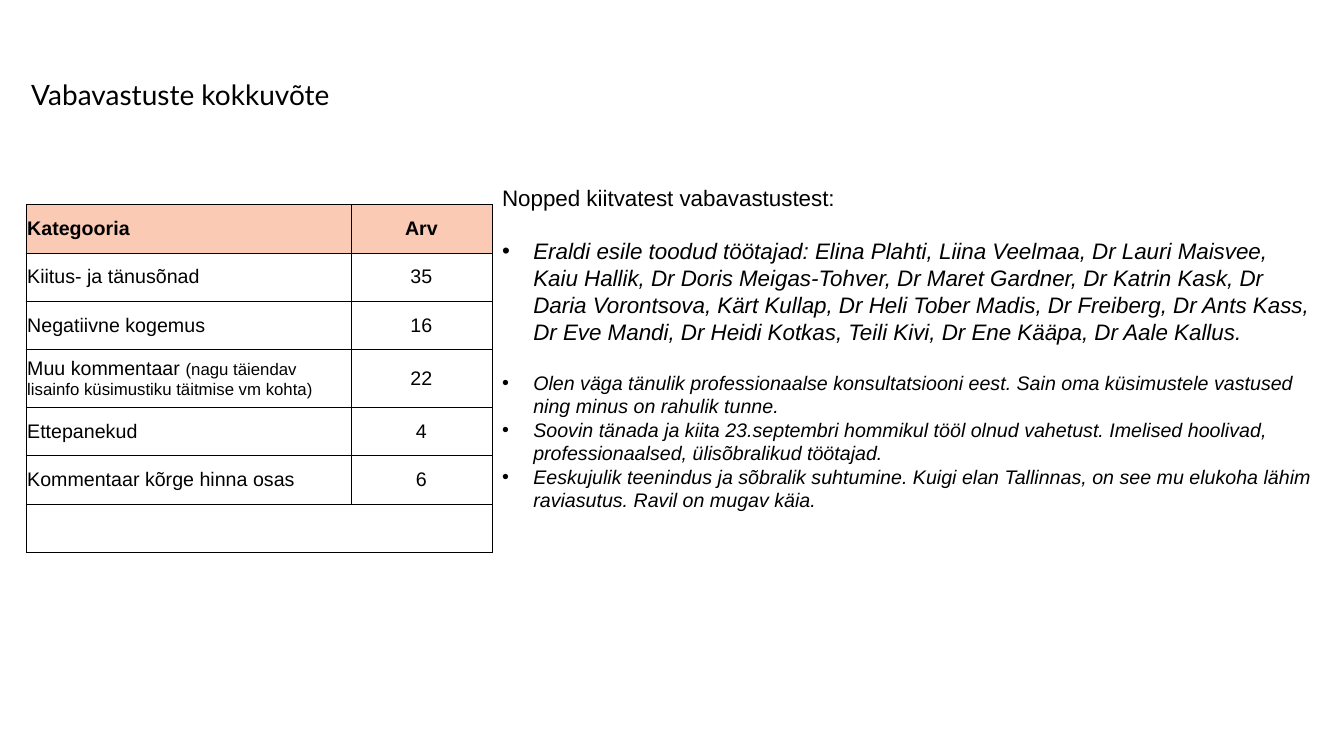
from lxml import etree
from pptx import Presentation
from pptx.dml.color import RGBColor
from pptx.enum.text import MSO_ANCHOR, PP_ALIGN
from pptx.oxml.ns import qn
from pptx.util import Inches, Pt

MIDDLE, TOP = MSO_ANCHOR.MIDDLE, MSO_ANCHOR.TOP
LEFT, CENTER = PP_ALIGN.LEFT, PP_ALIGN.CENTER

BLACK, PEACH = "000000", "FACAB4"
COLUMN_WIDTHS = (3.22, 1.4)
ROW_HEIGHTS = (0.48, 0.48, 0.48, 0.57, 0.48, 0.48, 0.48)
CATEGORIES = [
    ("Kategooria", "Arv"),
    ("Kiitus- ja tänusõnad", "35"),
    ("Negatiivne kogemus", "16"),
    ("Muu kommentaar ", "22"),
    ("Ettepanekud", "4"),
    ("Kommentaar kõrge hinna osas", "6"),
]
OTHER_ROW = 3
OTHER_NOTE = "(nagu täiendav lisainfo küsimustiku täitmise vm kohta)"

# Text, size, space before
QUOTES = [
    ("Eraldi esile toodud töötajad: Elina Plahti, Liina Veelmaa, Dr Lauri Maisvee, "
     "Kaiu Hallik, Dr Doris Meigas-Tohver, Dr Maret Gardner, Dr Katrin Kask, "
     "Dr Daria Vorontsova, Kärt Kullap, Dr Heli Tober Madis, Dr Freiberg, "
     "Dr Ants Kass, Dr Eve Mandi, Dr Heidi Kotkas, Teili Kivi, Dr Ene Kääpa, "
     "Dr Aale Kallus.", 16, 18.5),
    ("Olen väga tänulik professionaalse konsultatsiooni eest. Sain oma küsimustele "
     "vastused ning minus on rahulik tunne.", 14, 18.5),
    ("Soovin tänada ja kiita 23.septembri hommikul tööl olnud vahetust. Imelised "
     "hoolivad, professionaalsed, ülisõbralikud töötajad.", 14, 0),
    ("Eeskujulik teenindus ja sõbralik suhtumine. Kuigi elan Tallinnas, on see mu "
     "elukoha lähim raviasutus. Ravil on mugav käia.", 14, 0),
]


def color(value):
    return RGBColor.from_string(value)


def style_font(font, size, name="Arial", bold=False, italic=False):
    font.name = name
    font.size = Pt(size)
    font.bold = bold
    font.italic = italic
    font.color.rgb = color(BLACK)


def set_margins(target, margin):
    target.margin_left = target.margin_right = Inches(margin)
    target.margin_top = target.margin_bottom = Inches(margin)


def add_text_box(page, left, top, width, height, text, size, name, anchor):
    box = page.shapes.add_textbox(Inches(left), Inches(top), Inches(width), Inches(height))
    frame = box.text_frame
    frame.word_wrap = True
    frame.vertical_anchor = anchor
    set_margins(frame, 0.05)
    frame.text = text
    style_font(frame.paragraphs[0].runs[0].font, size, name)
    return frame


def add_bullet(frame, text, size, space_before):
    para = frame.add_paragraph()
    para.text = text
    properties = para._p.get_or_add_pPr()
    properties.set("marL", str(Inches(0.31)))
    properties.set("indent", str(-Inches(0.31)))
    etree.SubElement(properties, qn("a:buFont"), typeface="Arial")
    etree.SubElement(properties, qn("a:buChar"), char="•")
    para.space_before = Pt(space_before)
    style_font(para.runs[0].font, size, italic=True)


def add_borders(cell):
    properties = cell._tc.get_or_add_tcPr()
    for side in ("lnL", "lnR", "lnT", "lnB"):
        line = etree.SubElement(properties, qn(f"a:{side}"), w=str(Pt(0.5)))
        fill = etree.SubElement(line, qn("a:solidFill"))
        etree.SubElement(fill, qn("a:srgbClr"), val=BLACK)


def style_cell(cell, is_header):
    add_borders(cell)
    set_margins(cell, 0.01)
    cell.vertical_anchor = MIDDLE
    if is_header:
        cell.fill.solid()
        cell.fill.fore_color.rgb = color(PEACH)
    else:
        cell.fill.background()


def add_category_table(page):
    frame = page.shapes.add_table(
        len(ROW_HEIGHTS), len(COLUMN_WIDTHS), Inches(0.26), Inches(2.03),
        Inches(sum(COLUMN_WIDTHS)), Inches(sum(ROW_HEIGHTS)))
    table = frame.table
    table.first_row = table.horz_banding = False
    for column, width in zip(table.columns, COLUMN_WIDTHS):
        column.width = Inches(width)
    for index, height in enumerate(ROW_HEIGHTS):
        table.rows[index].height = Inches(height)
        for cell in table.rows[index].cells:
            style_cell(cell, index == 0)

    for row, values in enumerate(CATEGORIES):
        for column, (value, align) in enumerate(zip(values, (LEFT, CENTER))):
            para = table.cell(row, column).text_frame.paragraphs[0]
            para.text = value
            para.alignment = align
            style_font(para.runs[0].font, 14, bold=row == 0)

    # Smaller note after the category name
    span = table.cell(OTHER_ROW, 0).text_frame.paragraphs[0].add_run()
    span.text = OTHER_NOTE
    style_font(span.font, 12)

    # Empty closing row across both columns
    last = len(ROW_HEIGHTS) - 1
    table.cell(last, 0).merge(table.cell(last, 1))


def main():
    deck = Presentation()
    deck.slide_width, deck.slide_height = Inches(13.33), Inches(7.5)
    page = deck.slides.add_slide(deck.slide_layouts[6])

    # Title
    title = add_text_box(page, 0.26, 0.49, 11.5, 0.93,
                         "Vabavastuste kokkuvõte", 20, "Lato", MIDDLE)
    title.paragraphs[0].line_spacing = 0.9

    # Answer counts
    add_category_table(page)

    # Selected praise
    praise = add_text_box(page, 4.93, 1.78, 8.14, 3.87,
                          "Nopped kiitvatest vabavastustest:", 16, "Arial", TOP)
    for quote in QUOTES:
        add_bullet(praise, *quote)

    deck.save("out.pptx")


if __name__ == "__main__":
    main()
